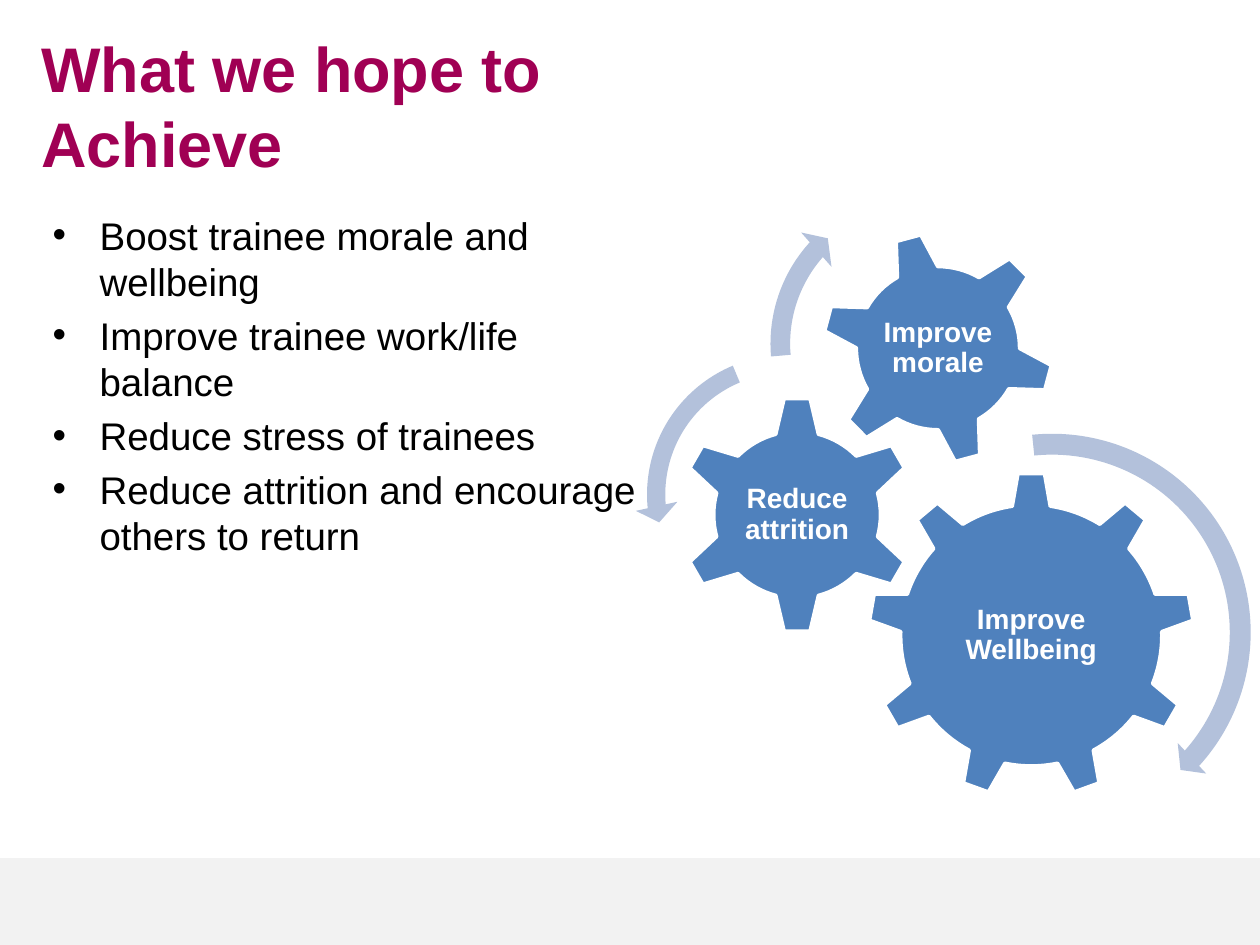
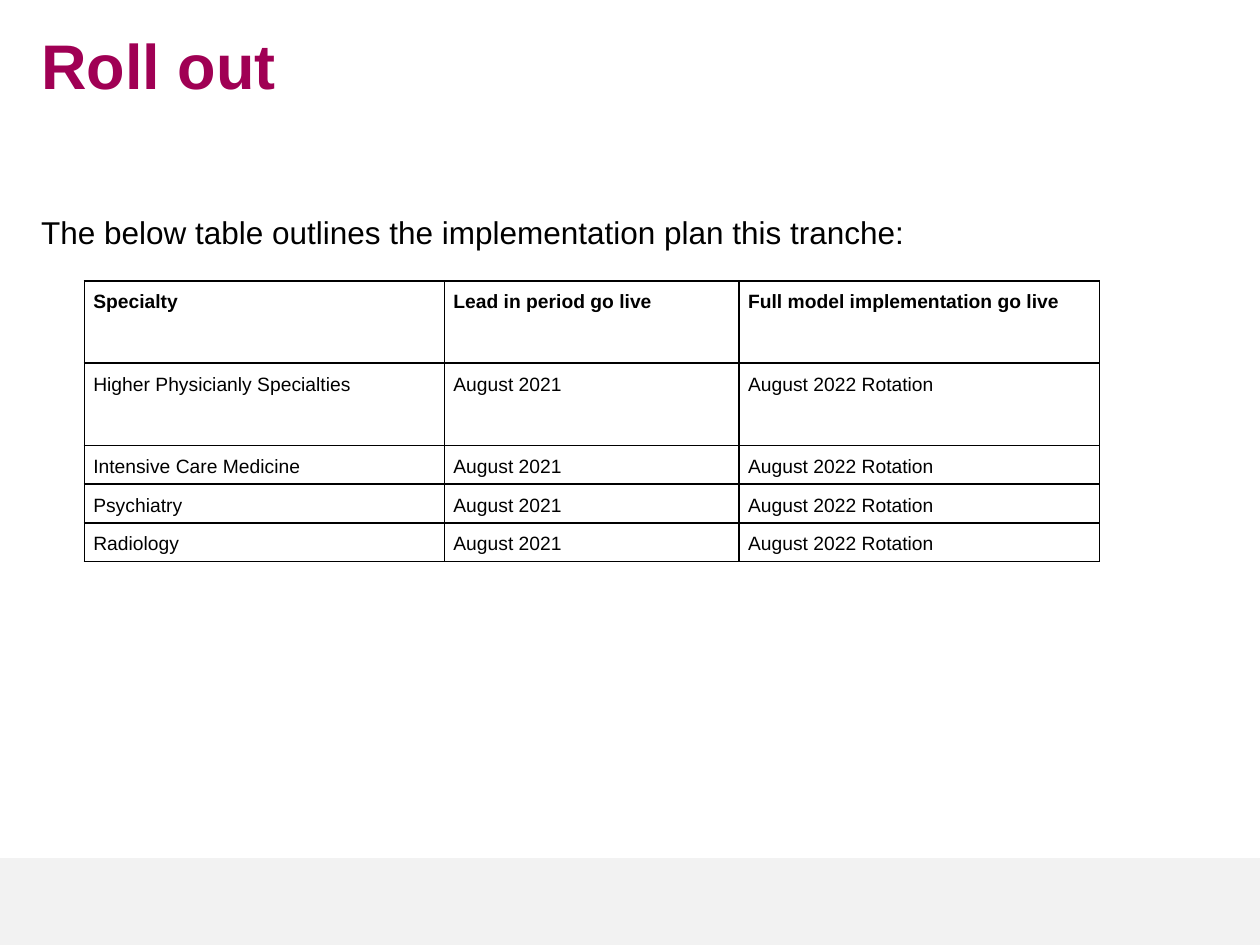
from lxml import etree
from pptx import Presentation
from pptx.dml.color import RGBColor
from pptx.enum.shapes import MSO_SHAPE
from pptx.enum.text import MSO_ANCHOR, MSO_AUTO_SIZE, PP_ALIGN
from pptx.oxml.ns import qn
from pptx.util import Cm, Pt

PLUM = RGBColor(0xA0, 0x00, 0x54)
BLACK = RGBColor(0x00, 0x00, 0x00)
WHITE = RGBColor(0xFF, 0xFF, 0xFF)
BAND_GREY = RGBColor(0xF2, 0xF2, 0xF2)
GEAR_BLUE = RGBColor(0x4F, 0x81, 0xBD)
ARROW_BLUE = RGBColor(0xB3, 0xC1, 0xDB)
FONT = "Arial"

RECTANGLE = MSO_SHAPE.RECTANGLE
GEAR_6 = MSO_SHAPE.GEAR_6
GEAR_9 = MSO_SHAPE.GEAR_9
RIGHT_TURN = MSO_SHAPE.CIRCULAR_ARROW
LEFT_TURN = MSO_SHAPE.LEFT_CIRCULAR_ARROW
LEFT, CENTER, JUSTIFY = PP_ALIGN.LEFT, PP_ALIGN.CENTER, PP_ALIGN.JUSTIFY
TOP, MIDDLE = MSO_ANCHOR.TOP, MSO_ANCHOR.MIDDLE
NO_AUTOFIT = MSO_AUTO_SIZE.NONE

TITLE_ONLY = 5
PAGE_WIDTH, PAGE_HEIGHT = 25.4, 19.05
BAND_HEIGHT = 1.75
BULLET_INDENT = Cm(0.95)
SPACE_SHARE = 0.2

GOALS = [
    "Boost trainee morale and wellbeing",
    "Improve trainee work/life balance",
    "Reduce stress of trainees",
    "Reduce attrition and encourage others to return",
]

# shape, centre x, centre y, size, rotation, label, label width, label height
GEARS = [
    (GEAR_9, 8.09, 9.25, 6.58, 0, "Improve Wellbeing", 3.94, 3.38),
    (GEAR_6, 3.37, 6.82, 4.8, 0, "Reduce attrition", 2.39, 2.36),
    (GEAR_6, 6.21, 3.46, 4.7, -15, "Improve morale", 2.64, 2.64),
]
TURN_ARROWS = [
    (RIGHT_TURN, 8.51, 9.19, 8.43, (0.05, 2.99, 25.19, 158.55, 0.05)),
    (LEFT_TURN, 3.16, 6.41, 6.12, (0.06, 4.3, 104.89, 148.38, 0.07)),
    (RIGHT_TURN, 5.87, 3.37, 6.6, (0.06, 3.94, 133.14, 105.08, 0.07)),
]

HEADINGS = ["Specialty", "Lead in period go live", "Full model implementation go live"]
SPECIALTIES = [
    "Higher Physicianly Specialties",
    "Intensive Care Medicine",
    "Psychiatry",
    "Radiology",
]
LEAD_IN, FULL_MODEL = "August 2021", "August 2022 Rotation"
COLUMN_WIDTHS = [7.26, 5.94, 7.26]
ROW_HEIGHTS = [1.66, 1.66, 0.78, 0.78, 0.78]


def style_font(para, size, color, bold=False):
    para.font.name = FONT
    para.font.size = Pt(size)
    para.font.color.rgb = color
    para.font.bold = bold


def add_filled_shape(shapes, kind, left, top, width, height, color):
    shape = shapes.add_shape(kind, Cm(left), Cm(top), Cm(width), Cm(height))
    shape.shadow.inherit = False
    shape.fill.solid()
    shape.fill.fore_color.rgb = color
    shape.line.fill.background()
    return shape


def add_page(deck, title_text, title_top):
    page = deck.slides.add_slide(deck.slide_layouts[TITLE_ONLY])
    add_filled_shape(page.shapes, RECTANGLE, 0, PAGE_HEIGHT - BAND_HEIGHT,
                     PAGE_WIDTH, BAND_HEIGHT, BAND_GREY)
    title = page.shapes.title
    title.left, title.top = Cm(0.58), Cm(title_top)
    title.width, title.height = Cm(21.59), Cm(1.88)
    frame = title.text_frame
    frame.text = title_text
    frame.auto_size = NO_AUTOFIT
    frame.vertical_anchor = TOP
    para = frame.paragraphs[0]
    para.alignment = LEFT
    style_font(para, 36, PLUM, bold=True)
    return page


def add_bullet(para):
    properties = para._p.get_or_add_pPr()
    properties.set("marL", str(BULLET_INDENT))
    properties.set("indent", str(-BULLET_INDENT))
    etree.SubElement(properties, qn("a:buFont")).set("typeface", FONT)
    etree.SubElement(properties, qn("a:buChar")).set("char", "•")


def add_body(page, left, top, width, height, lines, size, bulleted=False):
    box = page.shapes.add_textbox(Cm(left), Cm(top), Cm(width), Cm(height))
    frame = box.text_frame
    frame.word_wrap = True
    for index, line in enumerate(lines):
        para = frame.add_paragraph() if index else frame.paragraphs[0]
        para.text = line
        if bulleted:
            add_bullet(para)
        if index:
            para.space_before = Pt(size * SPACE_SHARE)
        style_font(para, size, BLACK)


def add_gear_label(shapes, center_x, center_y, width, height, label):
    box = shapes.add_textbox(Cm(center_x - width / 2), Cm(center_y - height / 2),
                             Cm(width), Cm(height))
    frame = box.text_frame
    frame.word_wrap = True
    frame.vertical_anchor = MIDDLE
    frame.margin_left = frame.margin_right = Cm(0.05)
    frame.margin_top = frame.margin_bottom = Cm(0.05)
    para = frame.paragraphs[0]
    para.text = label
    para.alignment = CENTER
    para.line_spacing = 0.9
    style_font(para, 16, WHITE, bold=True)


def add_gear_diagram(page, left, top):
    shapes = page.shapes.add_group_shape().shapes
    for kind, x, y, size, rotation, label, label_width, label_height in GEARS:
        gear = add_filled_shape(shapes, kind, left + x - size / 2, top + y - size / 2,
                                size, size, GEAR_BLUE)
        gear.line.color.rgb = WHITE
        gear.line.width = Pt(2)
        gear.rotation = rotation
        add_gear_label(shapes, left + x, top + y, label_width, label_height, label)
    for kind, x, y, size, adjustments in TURN_ARROWS:
        arrow = add_filled_shape(shapes, kind, left + x - size / 2, top + y - size / 2,
                                 size, size, ARROW_BLUE)
        for index, value in enumerate(adjustments):
            arrow.adjustments[index] = value


def add_borders(cell):
    properties = cell._tc.get_or_add_tcPr()
    for index, side in enumerate(("a:lnL", "a:lnR", "a:lnT", "a:lnB")):
        line = etree.Element(qn(side), w=str(Pt(1)))
        fill = etree.SubElement(line, qn("a:solidFill"))
        etree.SubElement(fill, qn("a:srgbClr")).set("val", str(BLACK))
        properties.insert(index, line)


def format_cell(cell, text, alignment, bold):
    cell.fill.background()
    add_borders(cell)
    cell.margin_left = cell.margin_right = Cm(0.18)
    cell.margin_top = cell.margin_bottom = 0
    para = cell.text_frame.paragraphs[0]
    para.text = text
    para.alignment = alignment
    para.line_spacing = 1.5
    style_font(para, 11, BLACK, bold)


def add_plan_table(page, left, top):
    rows = [HEADINGS] + [[name, LEAD_IN, FULL_MODEL] for name in SPECIALTIES]
    frame = page.shapes.add_table(len(rows), len(HEADINGS), Cm(left), Cm(top),
                                  Cm(sum(COLUMN_WIDTHS)), Cm(sum(ROW_HEIGHTS)))
    table = frame.table
    table.first_row = table.horz_banding = False
    for column, width in zip(table.columns, COLUMN_WIDTHS):
        column.width = Cm(width)
    for row_index, (row, height) in enumerate(zip(rows, ROW_HEIGHTS)):
        table.rows[row_index].height = Cm(height)
        is_heading = row_index == 0
        for column_index, text in enumerate(row):
            alignment = JUSTIFY if is_heading or column_index else LEFT
            format_cell(table.cell(row_index, column_index), text, alignment, is_heading)


def build_goals_page(deck):
    page = add_page(deck, "What we hope to\vAchieve", 0.46)
    add_body(page, 0.81, 4.14, 12.73, 12.34, GOALS, 22, bulleted=True)
    add_gear_diagram(page, 12.7, 3.56)


def build_roll_out_page(deck):
    page = add_page(deck, "Roll out", 0.41)
    add_body(page, 0.58, 4.17, 24.28, 11.23,
             ["The below table outlines the implementation plan this tranche:"], 18)
    add_plan_table(page, 1.7, 5.66)


def main():
    deck = Presentation()
    deck.slide_width, deck.slide_height = Cm(PAGE_WIDTH), Cm(PAGE_HEIGHT)
    build_goals_page(deck)
    build_roll_out_page(deck)
    deck.save("out.pptx")


if __name__ == "__main__":
    main()
